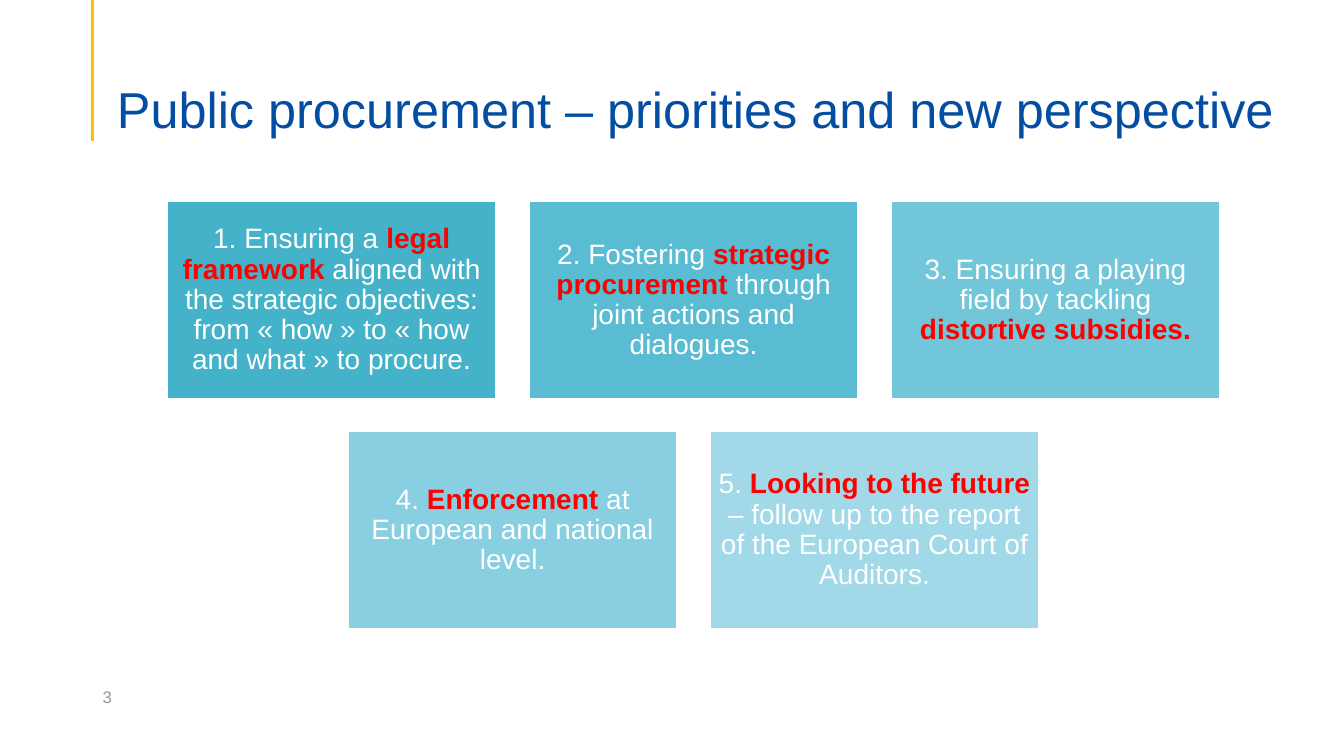
from lxml.etree import SubElement
from pptx import Presentation
from pptx.dml.color import RGBColor
from pptx.enum.shapes import MSO_CONNECTOR, MSO_SHAPE
from pptx.enum.text import MSO_ANCHOR, MSO_AUTO_SIZE, PP_ALIGN
from pptx.oxml.ns import qn
from pptx.util import Inches, Pt

CARD_WIDTH, CARD_HEIGHT = 3.26, 1.96
COLUMN_PITCH, ROW_PITCH = 3.59, 2.28
GRID_LEFT, GRID_TOP = 1.66, 2
COLUMNS = 3

# Card fill and its text runs; True marks an emphasised run
PRIORITIES = [
    ("44B3C9", [("1. Ensuring a ", False), ("legal framework ", True),
                ("aligned with the strategic objectives: from « how » to "
                 "« how and what » to procure.", False)]),
    ("5ABCD2", [("2. Fostering ", False), ("strategic procurement", True),
                (" through joint actions and dialogues.", False)]),
    ("71C6DA", [("3. Ensuring a playing field by tackling ", False),
                ("distortive subsidies.", True)]),
    ("89CFE2", [("4. ", False), ("Enforcement", True),
                (" at European and national level.", False)]),
    ("A1D9E9", [("5. ", False), ("Looking to the future ", True),
                ("– follow up to the report of the European Court of "
                 "Auditors.", False)]),
]


def rgb(hex_string):
    return RGBColor.from_string(hex_string)


class PrioritiesSlide:
    font = "Arial"
    title_color = "034EA2"
    accent = "FFC000"
    white = "FFFFFF"
    emphasis = "FF0000"
    muted = "979797"

    def __init__(self, slide):
        self.slide = slide
        self.shapes = slide.shapes

    def add_run(self, paragraph, text, size, color, bold=False):
        run = paragraph.add_run()
        run.text = text
        run.font.name = self.font
        run.font.size = Pt(size)
        run.font.bold = bold
        run.font.color.rgb = rgb(color)

    def set_frame(self, frame, anchor, margins):
        """Wrap and anchor a frame; margins are left, top, right, bottom."""
        frame.word_wrap = True
        frame.auto_size = MSO_AUTO_SIZE.NONE
        frame.vertical_anchor = anchor
        (frame.margin_left, frame.margin_top,
         frame.margin_right, frame.margin_bottom) = map(Inches, margins)

    def add_accent_line(self, x, top, bottom):
        line = self.shapes.add_connector(
            MSO_CONNECTOR.STRAIGHT, Inches(x), Inches(top), Inches(x), Inches(bottom))
        line.line.color.rgb = rgb(self.accent)
        line.line.width = Pt(2.25)
        SubElement(line._element.spPr, qn("a:effectLst"))

    def set_title(self, text, left, top, width, height):
        title = self.shapes.title
        title.left, title.top = Inches(left), Inches(top)
        title.width, title.height = Inches(width), Inches(height)
        self.set_frame(title.text_frame, MSO_ANCHOR.BOTTOM, (0.1, 0.05, 0.1, 0))
        paragraph = title.text_frame.paragraphs[0]
        paragraph.alignment = PP_ALIGN.LEFT
        paragraph.line_spacing = 0.9
        self.add_run(paragraph, text, 36, self.title_color)

    def add_page_number(self, number, left, top, width, height):
        box = self.shapes.add_textbox(
            Inches(left), Inches(top), Inches(width), Inches(height))
        self.set_frame(box.text_frame, MSO_ANCHOR.MIDDLE, (0.1, 0.05, 0.1, 0.05))
        paragraph = box.text_frame.paragraphs[0]
        paragraph.space_after = Pt(6)
        self.add_run(paragraph, number, 12, self.muted)

    def add_card(self, left, top, fill, runs):
        card = self.shapes.add_shape(
            MSO_SHAPE.RECTANGLE, Inches(left), Inches(top),
            Inches(CARD_WIDTH), Inches(CARD_HEIGHT))
        card.shadow.inherit = False
        card.fill.solid()
        card.fill.fore_color.rgb = rgb(fill)
        card.line.color.rgb = rgb(self.white)
        card.line.width = Pt(1)
        self.set_frame(card.text_frame, MSO_ANCHOR.MIDDLE, (0.08,) * 4)
        paragraph = card.text_frame.paragraphs[0]
        paragraph.alignment = PP_ALIGN.CENTER
        paragraph.line_spacing = 0.9
        for text, emphasised in runs:
            color = self.emphasis if emphasised else self.white
            self.add_run(paragraph, text, 20, color, emphasised)

    def add_card_grid(self, cards):
        """Fill rows of cards, centring a row that is not full."""
        for index, (fill, runs) in enumerate(cards):
            row, column = divmod(index, COLUMNS)
            in_row = min(COLUMNS, len(cards) - row * COLUMNS)
            indent = (COLUMNS - in_row) / 2
            self.add_card(GRID_LEFT + (column + indent) * COLUMN_PITCH,
                          GRID_TOP + row * ROW_PITCH, fill, runs)


def main():
    presentation = Presentation()
    presentation.slide_width = Inches(13.33)
    presentation.slide_height = Inches(7.5)
    title_only = presentation.slide_layouts[5]
    page = PrioritiesSlide(presentation.slides.add_slide(title_only))

    page.add_accent_line(0.92, 0, 1.4)
    page.add_page_number("3", 0.92, 6.71, 3, 0.4)
    page.set_title("Public procurement – priorities and new perspective",
                   1.06, 0.12, 11.78, 1.26)
    page.add_card_grid(PRIORITIES)
    presentation.save("out.pptx")


if __name__ == "__main__":
    main()
